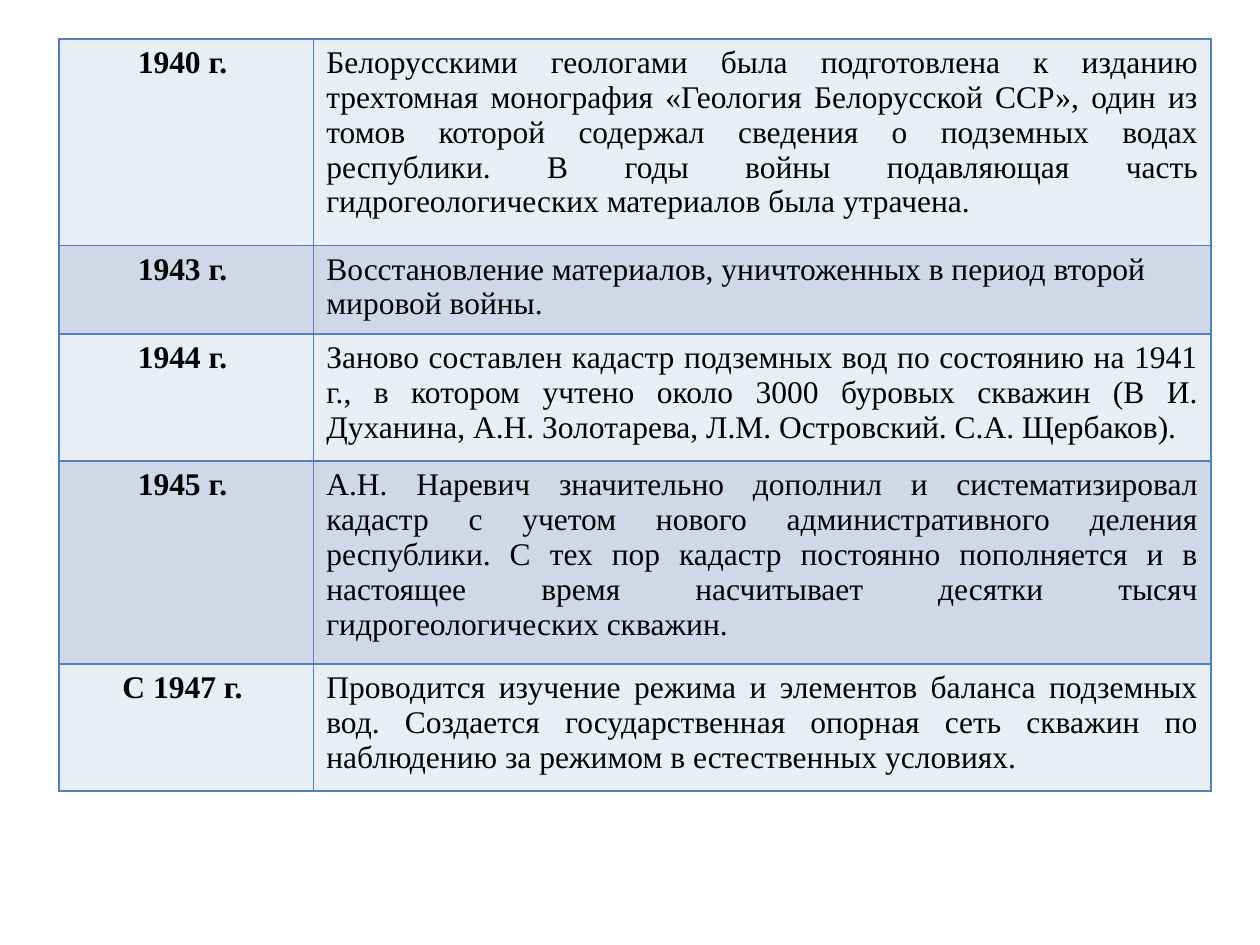
from lxml.etree import SubElement
from pptx import Presentation
from pptx.dml.color import RGBColor
from pptx.enum.text import PP_ALIGN
from pptx.oxml.ns import qn
from pptx.util import Inches, Pt

LIGHT = RGBColor(0xE9, 0xED, 0xF4)
DARK = RGBColor(0xD0, 0xD8, 0xE8)
EDGE = RGBColor(0x4F, 0x81, 0xBD)
BLACK = RGBColor(0, 0, 0)

FONT = {"name": "Times New Roman", "size": Pt(18)}
COLS = (2.02, 7.12)
# Year, event, row height in inches, alignment of the event
ROWS = (
    ("1940 г. ",
     "Белорусскими геологами была подготовлена к изданию трехтомная "
     "монография «Геология Белорусской ССР», один из томов которой содержал "
     "сведения о подземных водах республики. В годы войны подавляющая часть "
     "гидрогеологических материалов была утрачена.",
     1.64, PP_ALIGN.JUSTIFY),
    ("1943 г. ",
     "Восстановление материалов, уничтоженных в период второй мировой войны.",
     0.7, PP_ALIGN.LEFT),
    ("1944 г. ",
     "Заново составлен кадастр подземных вод по состоянию на 1941 г., в котором "
     "учтено около 3000 буровых скважин (В И. Духанина, А.Н. Золотарева, "
     "Л.М. Островский. С.А. Щербаков).",
     1.01, PP_ALIGN.JUSTIFY),
    ("1945 г. ",
     "А.Н. Наревич значительно дополнил и систематизировал кадастр с учетом "
     "нового административного деления республики. С тех пор кадастр постоянно "
     "пополняется и в настоящее время насчитывает десятки тысяч "
     "гидрогеологических скважин.",
     1.61, PP_ALIGN.JUSTIFY),
    ("С 1947 г. ",
     "Проводится изучение режима и элементов баланса подземных вод. Создается "
     "государственная опорная сеть скважин по наблюдению за режимом в "
     "естественных условиях.",
     1.01, PP_ALIGN.JUSTIFY),
)


def add_edges(cell):
    props = cell._tc.get_or_add_tcPr()
    for place, side in enumerate(("a:lnL", "a:lnR", "a:lnT", "a:lnB")):
        line = SubElement(props, qn(side), w=str(Pt(1)))
        fill = SubElement(line, qn("a:solidFill"))
        SubElement(fill, qn("a:srgbClr"), val=str(EDGE))
        props.insert(place, line)  # edges come before the fill


def fill_cell(cell, text, tint, align, bold):
    cell.fill.solid()
    cell.fill.fore_color.rgb = tint
    add_edges(cell)
    para = cell.text_frame.paragraphs[0]
    para.alignment = align
    run = para.add_run()
    run.text = text
    for key, value in {**FONT, "bold": bold}.items():
        setattr(run.font, key, value)
    run.font.color.rgb = BLACK


def add_dates(slide):
    high = sum(row[2] for row in ROWS)
    table = slide.shapes.add_table(
        len(ROWS), len(COLS), Inches(0.47), Inches(0.31),
        Inches(sum(COLS)), Inches(high)).table
    table.first_row = False
    for col, width in zip(table.columns, COLS):
        col.width = Inches(width)
    for i, (year, event, height, align) in enumerate(ROWS):
        table.rows[i].height = Inches(height)
        tint = DARK if i % 2 else LIGHT
        fill_cell(table.cell(i, 0), year, tint, PP_ALIGN.CENTER, True)
        fill_cell(table.cell(i, 1), event, tint, align, False)


def main():
    deck = Presentation()
    deck.slide_width, deck.slide_height = Inches(10), Inches(7.5)
    slide = deck.slides.add_slide(deck.slide_layouts[6])
    add_dates(slide)
    deck.save("out.pptx")


if __name__ == "__main__":
    main()
